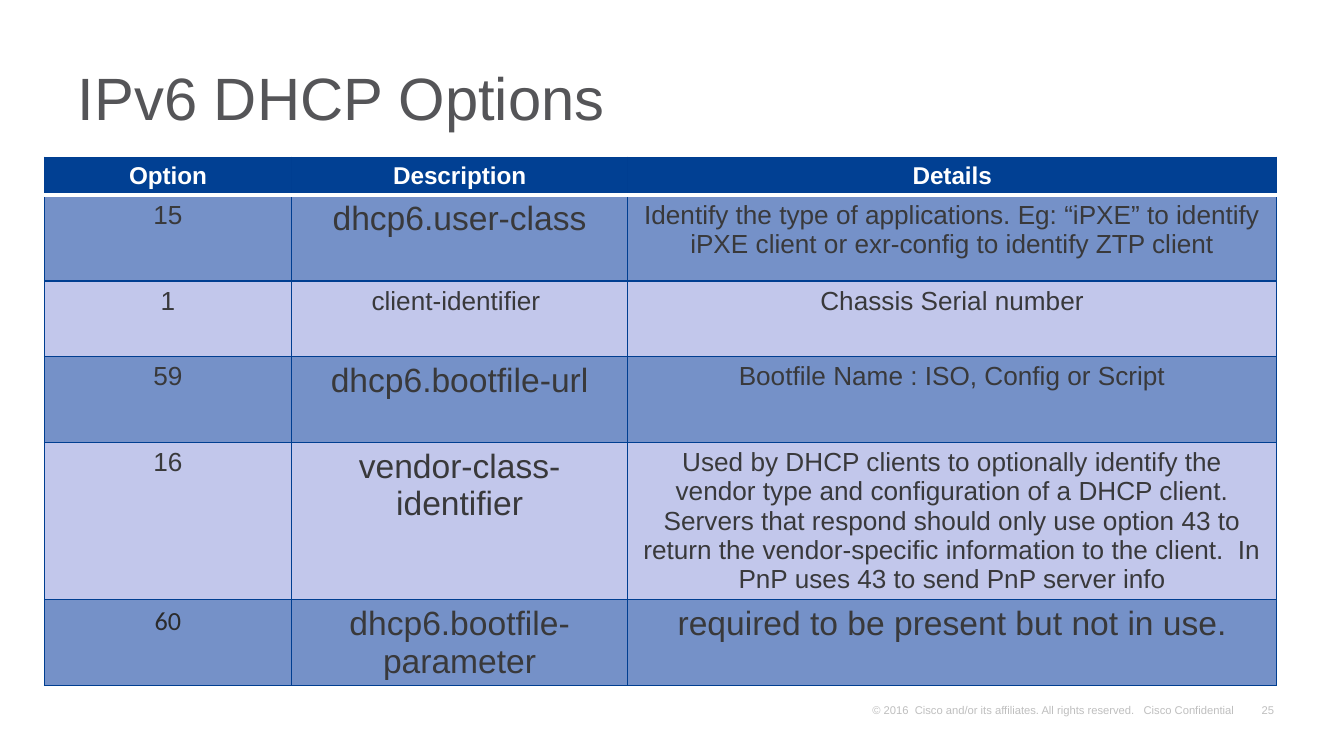
"""Build the IPv6 DHCP options slide."""
from typing import NamedTuple

from lxml.etree import SubElement
from pptx import Presentation
from pptx.dml.color import RGBColor
from pptx.enum.text import MSO_ANCHOR, PP_ALIGN
from pptx.oxml.ns import qn
from pptx.util import Inches, Pt

NAVY, GRID, WHITE = "014093", "003E91", "FFFFFF"
DARK_BAND, LIGHT_BAND = "7591C8", "C2C7EB"
TEXT, TITLE, FOOTER = "39393B", "555558", "BFBFBF"
COLUMN_WIDTHS = (1.84, 2.5, 4.83)


class Option(NamedTuple):
    code: str
    description: str
    details: str
    height: float
    sizes: tuple[int, int, int] = (14, 18, 14)
    code_font: str = "Arial"
    code_color: str = TEXT


class Footer(NamedTuple):
    text: str
    left: float
    width: float
    align: PP_ALIGN
    wrap: bool


HEADER = Option("Option", "Description", "Details", 0.28, (13, 13, 13), code_color=WHITE)
OPTIONS = [
    Option("15", "dhcp6.user-class",
           "Identify the type of applications. Eg: “iPXE” to identify iPXE client "
           "or exr-config to identify ZTP client", 0.64),
    Option("1", "client-identifier ", "Chassis Serial number", 0.56, (14, 14, 14)),
    Option("59", "dhcp6.bootfile-url", "Bootfile Name : ISO, Config or Script", 0.64),
    Option("16", "vendor-class-identifier",
           "Used by DHCP clients to optionally identify the vendor type and configuration "
           "of a DHCP client. Servers that respond should only use option 43 to return the "
           "vendor-specific information to the client.  In PnP uses 43 to send PnP server info",
           1.17),
    Option("60", "dhcp6.bootfile-parameter", "required to be present but not in use.", 0.63,
           (14, 18, 18), "Calibri", "2B2B2C"),
]
FOOTERS = [
    Footer("© 2016  Cisco and/or its affiliates. All rights reserved.   Cisco Confidential",
           6.42, 2.91, PP_ALIGN.LEFT, True),
    Footer("25", 9.31, 0.24, PP_ALIGN.RIGHT, False),
]


def rgb(value: str) -> RGBColor:
    """Return the colour for a hex string."""
    return RGBColor.from_string(value)


def format_text(p, size: float, color: str, name: str = "Arial", bold: bool = False) -> None:
    """Format every run of a paragraph."""
    for r in p.runs:
        r.font.size, r.font.name, r.font.bold = Pt(size), name, bold
        r.font.color.rgb = rgb(color)


def add_border(cell, side: str, color: str, width: float) -> None:
    """Draw one border line of a cell."""
    ln = SubElement(cell._tc.get_or_add_tcPr(), qn(f"a:ln{side}"), w=str(Pt(width)))
    SubElement(SubElement(ln, qn("a:solidFill")), qn("a:srgbClr"), val=color)


def fill_row(table, index: int, option: Option) -> None:
    """Write and style one table row."""
    is_header = index == 0
    fill = NAVY if is_header else DARK_BAND if index % 2 else LIGHT_BAND
    table.rows[index].height = Inches(option.height)
    for column, (text, size) in enumerate(zip(option[:3], option.sizes)):
        cell = table.cell(index, column)
        cell.text = text
        cell.margin_left = cell.margin_right = Inches(0.1)
        cell.margin_top = cell.margin_bottom = Inches(0.04)
        for side in "LRTB":
            white = (is_header and side == "B") or (index == 1 and side == "T")
            add_border(cell, side, WHITE if white else GRID, 2 if white else 0.75)
        cell.fill.solid()
        cell.fill.fore_color.rgb = rgb(fill)
        p = cell.text_frame.paragraphs[0]
        p.alignment = PP_ALIGN.CENTER
        color = WHITE if is_header else option.code_color if column == 0 else TEXT
        name = option.code_font if column == 0 else "Arial"
        format_text(p, size, color, name, is_header)


def add_options_table(slide) -> None:
    """Add the table of DHCP options."""
    rows = [HEADER, *OPTIONS]
    table = slide.shapes.add_table(
        len(rows), len(COLUMN_WIDTHS), Inches(0.33), Inches(1.17),
        Inches(sum(COLUMN_WIDTHS)), Inches(sum(row.height for row in rows))).table
    for column, width in zip(table.columns, COLUMN_WIDTHS):
        column.width = Inches(width)
    for index, option in enumerate(rows):
        fill_row(table, index, option)


def add_title(slide, text: str) -> None:
    """Place and format the title placeholder."""
    sp = slide.shapes.title
    sp.left, sp.top, sp.width, sp.height = map(Inches, (0.48, 0.37, 9.13, 0.8))
    tf = sp.text_frame
    tf.text = text
    tf.vertical_anchor = MSO_ANCHOR.MIDDLE
    p = tf.paragraphs[0]
    p.alignment, p.line_spacing = PP_ALIGN.LEFT, 0.8
    format_text(p, 32, TITLE)


def add_footer(slide, footer: Footer) -> None:
    """Add one small text box at the foot of the slide."""
    sp = slide.shapes.add_textbox(
        Inches(footer.left), Inches(5.19), Inches(footer.width), Inches(0.17))
    tf = sp.text_frame
    tf.text = footer.text
    tf.word_wrap = footer.wrap
    tf.vertical_anchor = MSO_ANCHOR.BOTTOM
    tf.margin_left = tf.margin_right = Inches(0.07)
    tf.margin_top = tf.margin_bottom = Inches(0.03)
    p = tf.paragraphs[0]
    p.alignment = footer.align
    format_text(p, 6, FOOTER)


def main() -> None:
    """Build and save the slide."""
    prs = Presentation()
    prs.slide_width, prs.slide_height = Inches(10), Inches(10 * 9 / 16)
    slide = prs.slides.add_slide(prs.slide_layouts[5])
    add_title(slide, "IPv6 DHCP Options")
    add_options_table(slide)
    for footer in FOOTERS:
        add_footer(slide, footer)
    prs.save("out.pptx")


if __name__ == "__main__":
    main()
